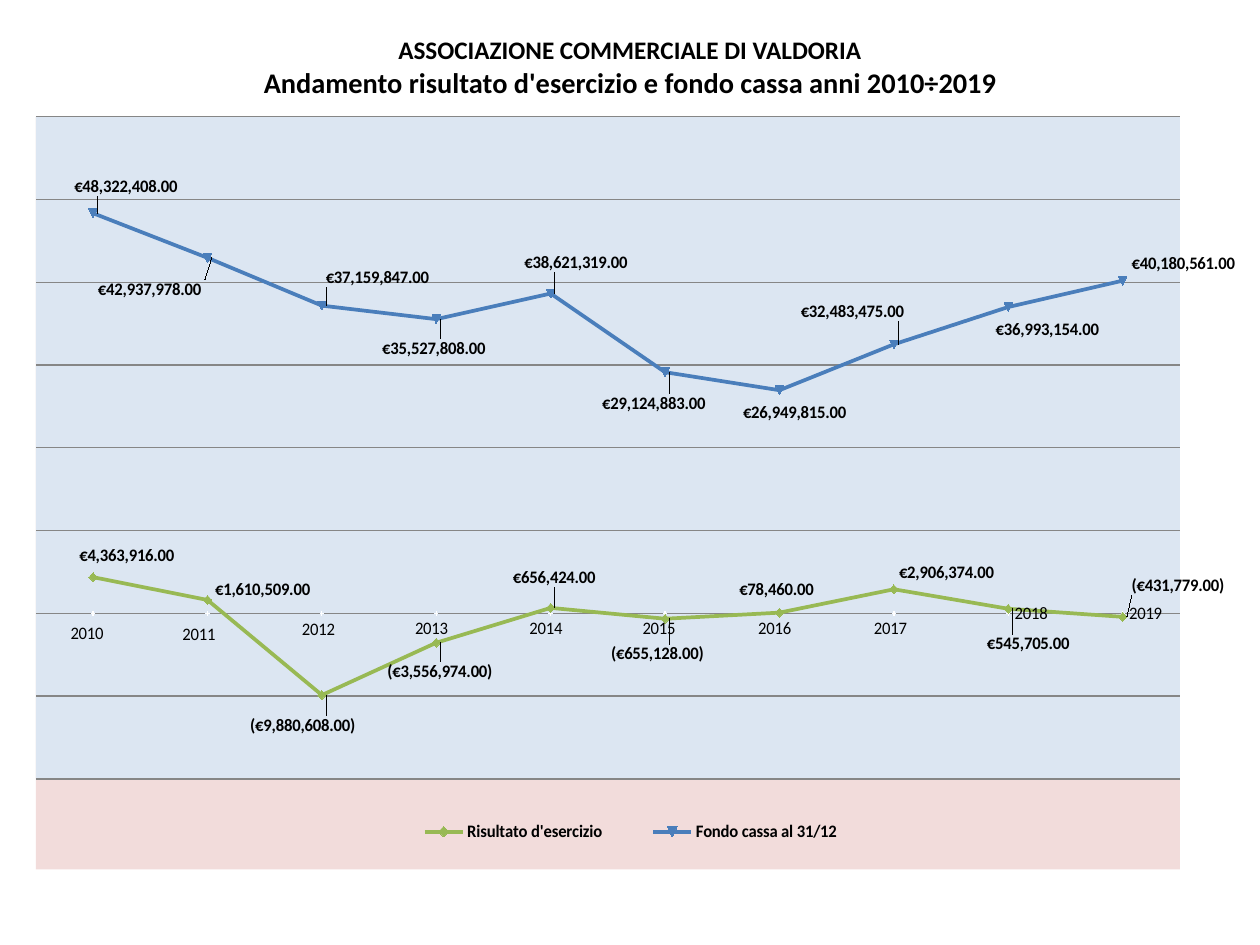
from pptx import Presentation
from pptx.chart.data import CategoryChartData
from pptx.dml.color import RGBColor
from pptx.enum.chart import XL_CHART_TYPE, XL_LABEL_POSITION, XL_LEGEND_POSITION, XL_MARKER_STYLE
from pptx.enum.text import MSO_ANCHOR, PP_ALIGN
from pptx.oxml import parse_xml
from pptx.oxml.ns import nsdecls
from pptx.util import Inches, Pt

LINE_MARKERS = XL_CHART_TYPE.LINE_MARKERS
LABEL_RIGHT = XL_LABEL_POSITION.RIGHT
LEGEND_RIGHT = XL_LEGEND_POSITION.RIGHT
PLUS = XL_MARKER_STYLE.PLUS
FONT = "Calibri"
EURO = '"€"#,##0.00_);[Red]\\("€"#,##0.00\\)'
PLOT_WIDTH, CHART_HEIGHT = 9.08, 5.98
NO_LEADER_LINES = (
    '<c:ext uri="{CE6537A1-D6FC-4f65-9D91-7224C49458BB}" '
    'xmlns:c15="http://schemas.microsoft.com/office/drawing/2012/chart">'
    '<c15:showLeaderLines val="0"/></c:ext>')


def set_font(font, size, color="000000", bold=False):
    font.name, font.size, font.bold = FONT, Pt(size), bold
    font.color.rgb = RGBColor.from_string(color)


def chart_xml(tag, body, attributes=""):
    return parse_xml(f'<c:{tag} {nsdecls("c", "a")} {attributes}>{body}</c:{tag}>')


presentation = Presentation()
presentation.slide_width, presentation.slide_height = Inches(10), Inches(7.5)
slide = presentation.slides.add_slide(presentation.slide_layouts[6])

# Title: two lines in one paragraph
title = slide.shapes.add_textbox(Inches(0.5), Inches(0.3), Inches(9), Inches(0.46))
frame = title.text_frame
frame.word_wrap = True
frame.vertical_anchor = MSO_ANCHOR.MIDDLE
paragraph = frame.paragraphs[0]
paragraph.alignment = PP_ALIGN.CENTER
run = paragraph.add_run()
run.text = "ASSOCIAZIONE COMMERCIALE DI VALDORIA"
set_font(run.font, 14.4, bold=True)
paragraph.add_line_break()
run = paragraph.add_run()
run.text = "Andamento risultato d'esercizio e fondo cassa anni 2010÷2019"
set_font(run.font, 16.2, bold=True)

# Series: name, values, line colour, label format, label shifts in inches
series_table = [
    ("Series 1", list(range(2010, 2020)), None, "General",
     [(-0.23, 0.16), (-0.25, 0.17), (-0.21, 0.13), (-0.22, 0.12), (-0.22, 0.12),
      (-0.23, 0.12), (-0.22, 0.12), (-0.21, 0.12), (0, 0), (0, 0)]),
    ("Risultato d'esercizio",
     [4363916, 1610509, -9880608, -3556974, 656424, -655128, 78460, 2906374, 545705, -431779],
     "98B954", EURO,
     [(-0.18, -0.17), (-0.01, -0.08), (-0.64, 0.24), (-0.46, 0.23), (-0.37, -0.24),
      (-0.5, 0.28), (-0.39, -0.18), (-0.03, -0.13), (-0.24, 0.28), (0, -0.25)]),
    ("Fondo cassa al 31/12",
     [48322408, 42937978, 37159847, 35527808, 38621319,
      29124883, 26949815, 32483475, 36993154, 40180561],
     "4A7EBB", EURO,
     [(-0.22, -0.21), (-0.94, 0.25), (-0.04, -0.22), (-0.5, 0.23), (-0.28, -0.25),
      (-0.57, 0.25), (-0.36, 0.18), (-0.81, -0.26), (-0.17, 0.18), (0, -0.14)]),
]
data = CategoryChartData()
data.categories = [str(number) for number in range(1, 11)]
for name, values, *_ in series_table:
    data.add_series(name, values)
chart = slide.shapes.add_chart(LINE_MARKERS, Inches(0.28), Inches(0.92),
                               Inches(9.55), Inches(CHART_HEIGHT), data).chart
chart.has_title = False
set_font(chart.font, 10)

# Axes
chart.category_axis.visible = False
value_axis = chart.value_axis
value_axis.visible = False
value_axis.minimum_scale, value_axis.maximum_scale = -20_000_000, 60_000_000
value_axis.major_unit = 10_000_000
value_axis.has_major_gridlines = True
grid_line = value_axis.major_gridlines.format.line
grid_line.color.rgb = RGBColor.from_string("868686")
grid_line.width = Pt(0.75)

# Lines and shifted value labels
for series, (_, _, color, number_format, shifts) in zip(chart.plots[0].series, series_table):
    series.smooth = False
    line = series.format.line
    if color:
        line.color.rgb = RGBColor.from_string(color)
        line.width = Pt(2.25)
    else:
        line.fill.background()
        series.marker.style, series.marker.size = PLUS, 2
        series.marker.format.fill.background()
        series.marker.format.line.color.rgb = RGBColor.from_string("FFFFFF")
    labels = series.data_labels
    labels.show_value = True
    labels.number_format, labels.number_format_is_linked = number_format, False
    set_font(labels.font, 10, bold=bool(color))
    for index in range(len(shifts)):
        label = series.points[index].data_label
        set_font(label.font, 10, bold=bool(color))
        label.position = LABEL_RIGHT
    escaped_format = number_format.replace('"', "&quot;")
    for element, (x, y) in zip(series._element.xpath(".//c:dLbl"), shifts):
        element.insert(1, chart_xml("layout", f'<c:manualLayout><c:x val="{x / PLOT_WIDTH}"/>'
                                    f'<c:y val="{y / CHART_HEIGHT}"/></c:manualLayout>'))
        element.insert(2, chart_xml("numFmt", "",
                                    f'formatCode="{escaped_format}" sourceLinked="0"'))

# Labels stand alone, without leader lines
for leader in chart.element.xpath(".//c:dLbls/c:showLeaderLines"):
    leader.getparent().remove(leader)
for label_group in chart.element.xpath(".//c:ser/c:dLbls"):
    label_group.append(chart_xml("extLst", NO_LEADER_LINES))

# Legend without the year series
chart.has_legend = True
chart.legend.position = LEGEND_RIGHT
chart.legend.include_in_layout = False
set_font(chart.legend.font, 10, bold=True)
overlay = chart.element.xpath(".//c:legend/c:overlay")[0]
for old_layout in chart.element.xpath(".//c:legend/c:layout | .//c:plotArea/c:layout"):
    old_layout.getparent().remove(old_layout)
overlay.addprevious(chart_xml("legendEntry", '<c:idx val="0"/><c:delete val="1"/>'))
overlay.addprevious(chart_xml(
    "layout", '<c:manualLayout><c:xMode val="edge"/><c:yMode val="edge"/><c:x val="0.3"/>'
    '<c:y val="0.92"/><c:w val="0.44"/><c:h val="0.06"/></c:manualLayout>'))

# Plot area and chart backgrounds
plot_area = chart.element.xpath(".//c:plotArea")[0]
plot_area.insert(0, chart_xml(
    "layout", '<c:manualLayout><c:layoutTarget val="inner"/><c:xMode val="edge"/>'
    '<c:yMode val="edge"/><c:x val="0"/><c:y val="0"/><c:w val="1"/>'
    '<c:h val="0.88"/></c:manualLayout>'))
plot_fill, chart_fill = [
    chart_xml("spPr", f'<a:solidFill><a:srgbClr val="{color}"/></a:solidFill>'
              '<a:ln><a:noFill/></a:ln>')
    for color in ("DCE6F2", "F2DCDB")]
plot_area.append(plot_fill)
chart.element.xpath("./c:chart")[0].addnext(chart_fill)

presentation.save("out.pptx")
